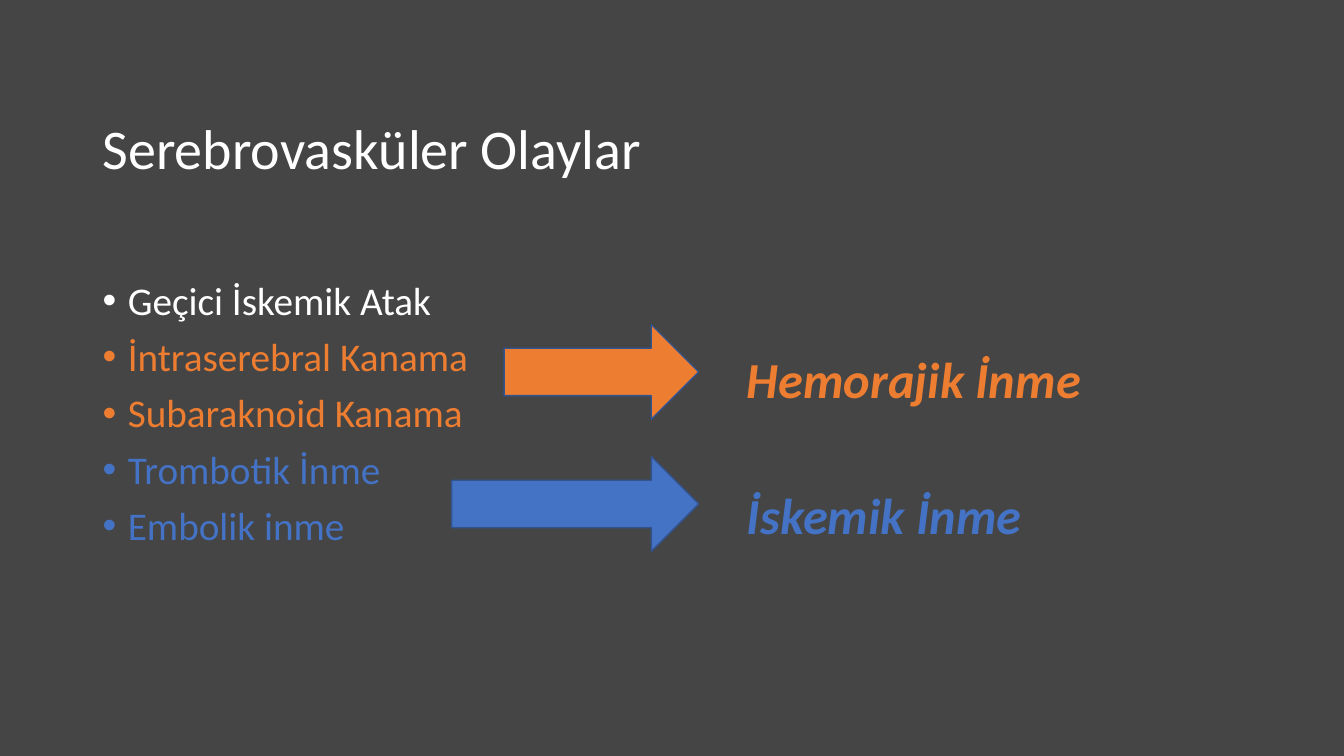
import dataclasses

import pptx
import pptx.dml.color
import pptx.enum.shapes
import pptx.enum.text
import pptx.oxml.ns
import pptx.oxml.xmlchemy
import pptx.util
from lxml import etree

Inches = pptx.util.Inches
Pt = pptx.util.Pt
Anchor = pptx.enum.text.MSO_ANCHOR
AutoSize = pptx.enum.text.MSO_AUTO_SIZE

WHITE, ORANGE, BLUE = "FFFFFF", "ED7D31", "4472C4"
BACKGROUND, OUTLINE = "454545", "325491"
LEFT_MARGIN = 0.92
ARROW_TIP, ARROW_HEIGHT = 6.93, 0.94
LABEL_LEFT, LABEL_HEIGHT = 7.31, 0.71


@dataclasses.dataclass
class Line:
    text: str
    color: str


@dataclasses.dataclass
class StrokeGroup:
    """An arrow and the stroke type it points to."""
    label: Line
    arrow_left: float
    arrow_top: float
    label_top: float
    label_width: float


EVENTS = [
    Line("Geçici İskemik Atak", WHITE),
    Line("İntraserebral Kanama", ORANGE),
    Line("Subaraknoid Kanama", ORANGE),
    Line("Trombotik İnme", BLUE),
    Line("Embolik inme", BLUE),
]
GROUPS = [
    StrokeGroup(Line("Hemorajik İnme", ORANGE), 5, 3.22, 3.4, 3.55),
    StrokeGroup(Line("İskemik İnme", BLUE), 4.48, 4.53, 4.75, 2.95),
]


def rgb(color: str) -> pptx.dml.color.RGBColor:
    return pptx.dml.color.RGBColor.from_string(color)


def apply_format(target, values: dict) -> None:
    for name, value in values.items():
        setattr(target, name, value)


def add_text(page, left: float, top: float, width: float, height: float,
             lines: list[Line], frame_format: dict, para_format: dict,
             font_format: dict):
    box = page.shapes.add_textbox(
        Inches(left), Inches(top), Inches(width), Inches(height))
    frame = box.text_frame
    apply_format(frame, frame_format)
    for index, line in enumerate(lines):
        para = frame.add_paragraph() if index else frame.paragraphs[0]
        apply_format(para, para_format)
        span = para.add_run()
        span.text = line.text
        apply_format(span.font, {"name": "Calibri", **font_format})
        span.font.color.rgb = rgb(line.color)
    return box


def add_bullet(para) -> None:
    properties = para._p.get_or_add_pPr()
    indent = Inches(0.25)
    properties.set("marL", str(indent))
    properties.set("indent", str(-indent))
    for tag, name, value in (("a:buFont", "typeface", "Arial"),
                             ("a:buChar", "char", "•")):
        etree.SubElement(properties, pptx.oxml.ns.qn(tag)).set(name, value)


def add_group(page, group: StrokeGroup) -> None:
    arrow = page.shapes.add_shape(
        pptx.enum.shapes.MSO_SHAPE.RIGHT_ARROW,
        Inches(group.arrow_left), Inches(group.arrow_top),
        Inches(ARROW_TIP - group.arrow_left), Inches(ARROW_HEIGHT))
    arrow.shadow.inherit = False
    arrow.fill.solid()
    arrow.fill.fore_color.rgb = rgb(group.label.color)
    arrow.line.color.rgb = rgb(OUTLINE)
    arrow.line.width = Pt(1)
    add_text(page, LABEL_LEFT, group.label_top, group.label_width,
             LABEL_HEIGHT, [group.label],
             {"word_wrap": False, "auto_size": AutoSize.SHAPE_TO_FIT_TEXT},
             {}, {"size": Pt(36), "bold": True, "italic": True})


def main() -> None:
    deck = pptx.Presentation()
    deck.slide_width, deck.slide_height = Inches(13.33), Inches(7.5)
    page = deck.slides.add_slide(deck.slide_layouts[6])
    page.background.fill.solid()
    page.background.fill.fore_color.rgb = rgb(BACKGROUND)

    # Title
    add_text(page, LEFT_MARGIN, 0.4, 11.5, 1.45,
             [Line("Serebrovasküler Olaylar", WHITE)],
             {"word_wrap": True, "vertical_anchor": Anchor.BOTTOM},
             {"line_spacing": 0.9}, {"size": Pt(40)})

    # Arrows and stroke types
    for group in GROUPS:
        add_group(page, group)

    # List of events
    events = add_text(page, LEFT_MARGIN, 2.74, 5.64, 4.03, EVENTS,
                      {"word_wrap": True, "vertical_anchor": Anchor.TOP},
                      {"line_spacing": 0.9, "space_before": Pt(10)},
                      {"size": Pt(28)})
    for para in events.text_frame.paragraphs:
        add_bullet(para)

    deck.save("out.pptx")


if __name__ == "__main__":
    main()
